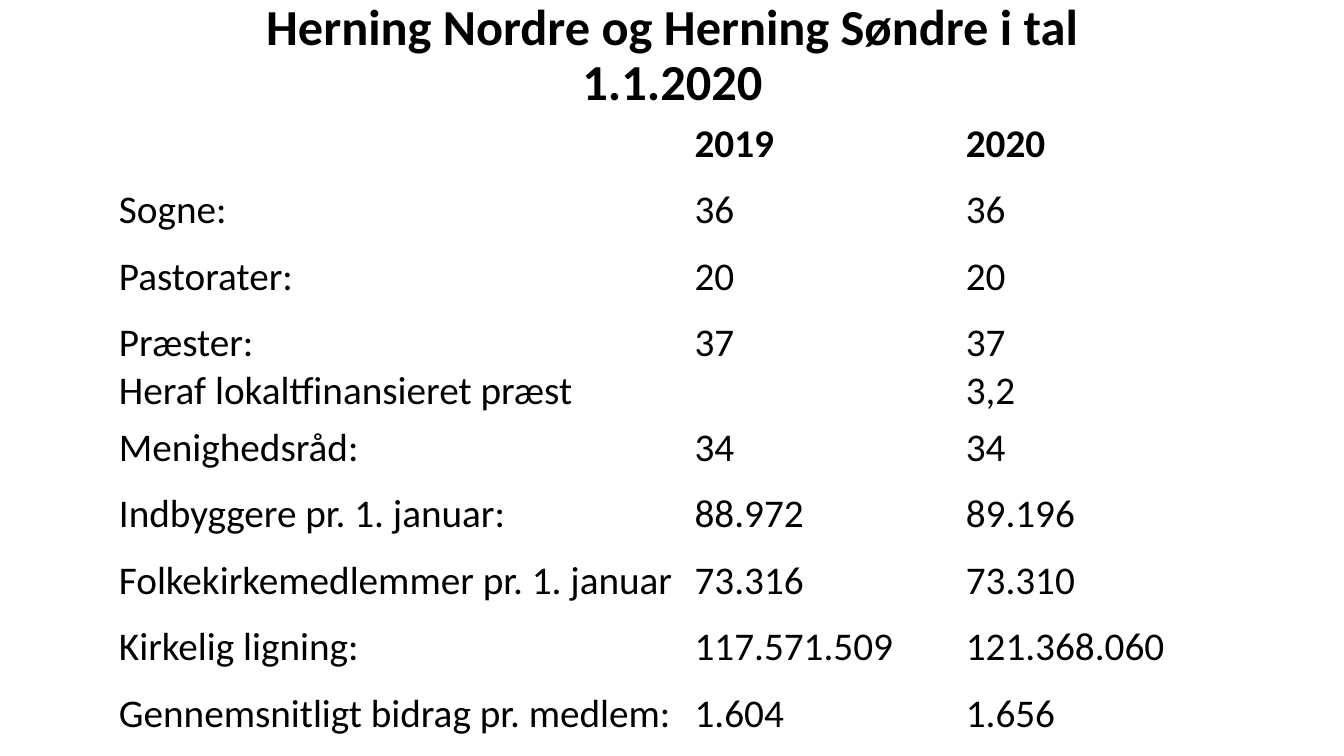
from lxml import etree
from pptx import Presentation
from pptx.dml.color import RGBColor
from pptx.enum.text import MSO_ANCHOR, PP_ALIGN
from pptx.oxml.ns import qn
from pptx.util import Inches, Pt

BOTTOM = MSO_ANCHOR.BOTTOM
CENTER = PP_ALIGN.CENTER
COLORS = {"text": "000000", "border": "FFFFFF"}
FONT = "Calibri"
TITLE = "Herning Nordre og Herning Søndre i tal 1.1.2020"
TITLE_BOX = (1.67, 0.36, 10, 0.79)
TABLE_ORIGIN = (1.08, 1.14)
COLUMN_WIDTHS = (5.71, 2.69, 2.36)
ROW_HEIGHT = 0.66
FIGURES = (
    ("", "2019", "2020"),
    ("Sogne:", "36", "36"),
    ("Pastorater:", "20", "20"),
    ("Præster:\nHeraf lokaltfinansieret præst", "37", "37\n3,2"),
    ("Menighedsråd:", "34", "34"),
    ("Indbyggere pr. 1. januar:", "88.972", "89.196"),
    ("Folkekirkemedlemmer pr. 1. januar", "73.316", "73.310"),
    ("Kirkelig ligning:", "117.571.509", "121.368.060"),
    ("Gennemsnitligt bidrag pr. medlem:", "1.604", "1.656"),
)


def style_text(frame, size, bold):
    for para in frame.paragraphs:
        para.font.name = FONT
        para.font.size = Pt(size)
        para.font.bold = bold
        para.font.color.rgb = RGBColor.from_string(COLORS["text"])


def add_title(slide, box):
    frame = slide.shapes.add_textbox(*map(Inches, box)).text_frame
    frame.word_wrap = True
    frame.vertical_anchor = BOTTOM
    frame.text = TITLE
    frame.paragraphs[0].alignment = CENTER
    frame.paragraphs[0].line_spacing = 0.9
    style_text(frame, 36, True)


def add_borders(cell):
    properties = cell._tc.get_or_add_tcPr()
    for index, side in enumerate(("lnL", "lnR", "lnT", "lnB")):
        line = etree.Element(qn(f"a:{side}"), w=str(Pt(1)))
        fill = etree.SubElement(line, qn("a:solidFill"))
        etree.SubElement(fill, qn("a:srgbClr"), val=COLORS["border"])
        properties.insert(index, line)


def add_figures(slide, origin):
    size = (sum(COLUMN_WIDTHS), ROW_HEIGHT * len(FIGURES))
    table = slide.shapes.add_table(
        len(FIGURES), len(COLUMN_WIDTHS), *map(Inches, origin + size)
    ).table
    table.first_row = False
    table.horz_banding = False
    for column, width in zip(table.columns, COLUMN_WIDTHS):
        column.width = Inches(width)
    for row_index, values in enumerate(FIGURES):
        table.rows[row_index].height = Inches(ROW_HEIGHT)
        for column_index, value in enumerate(values):
            cell = table.cell(row_index, column_index)
            cell.text = value
            cell.fill.background()
            add_borders(cell)
            style_text(cell.text_frame, 28, row_index == 0)


def main():
    deck = Presentation()
    deck.slide_width = Inches(13.33)
    deck.slide_height = Inches(7.5)
    slide = deck.slides.add_slide(deck.slide_layouts[6])
    add_title(slide, TITLE_BOX)
    add_figures(slide, TABLE_ORIGIN)
    deck.save("out.pptx")


if __name__ == "__main__":
    main()
